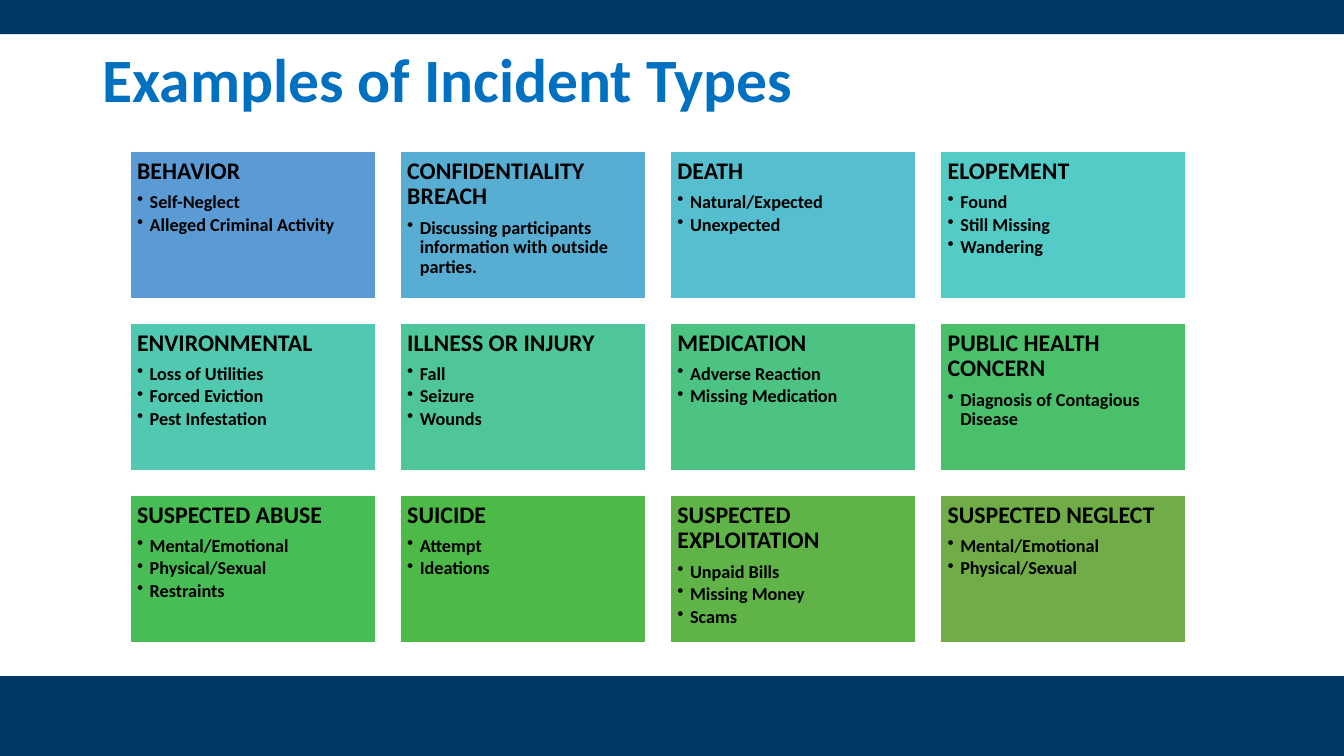
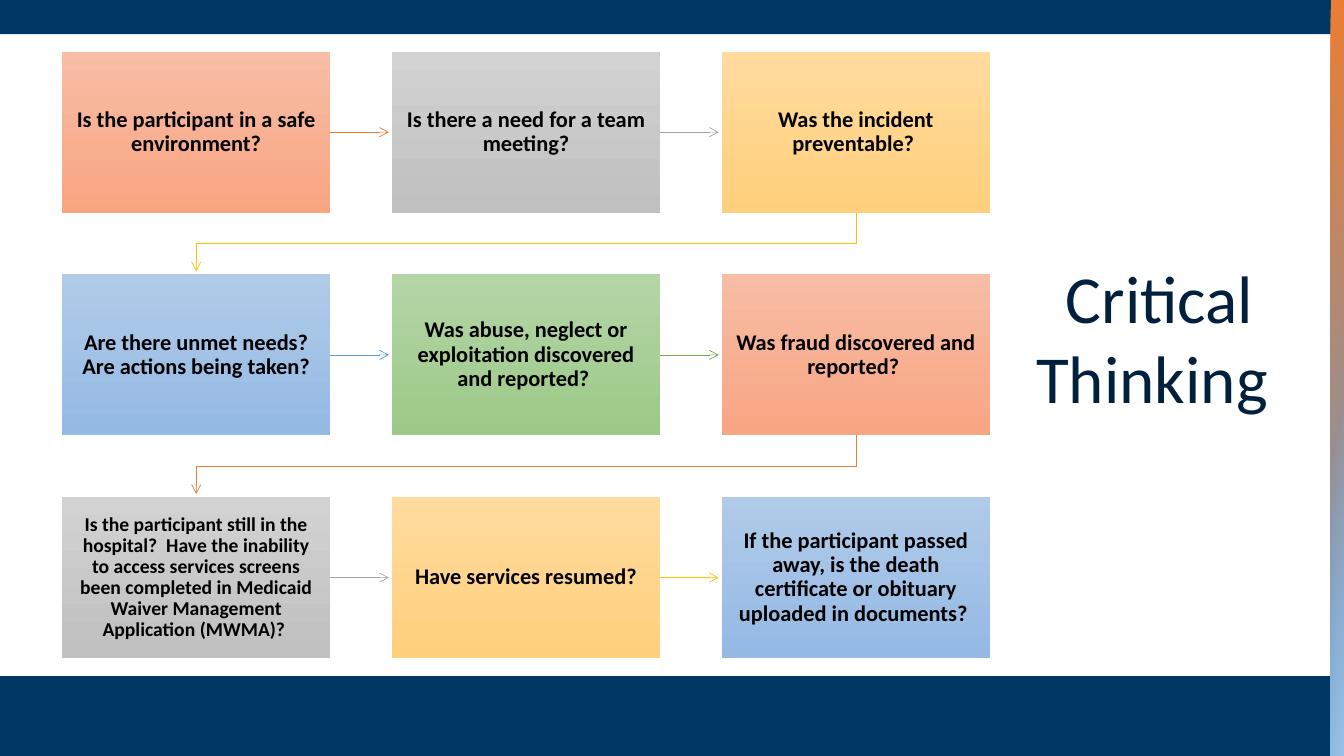
"""Build two slides on incident types and critical thinking."""
from lxml.etree import SubElement
from pptx import Presentation
from pptx.dml.color import RGBColor
from pptx.enum.shapes import MSO_CONNECTOR, MSO_SHAPE
from pptx.enum.text import MSO_ANCHOR, PP_ALIGN
from pptx.oxml.ns import qn
from pptx.util import Pt

WIDE, HIGH = 960, 540
FONT = "Calibri"
NAVY = RGBColor(0x00, 0x38, 0x65)
INK = RGBColor(0x01, 0x20, 0x3D)
AZURE = RGBColor(0x00, 0x70, 0xC0)
BLACK = RGBColor(0x00, 0x00, 0x00)
WHITE = RGBColor(0xFF, 0xFF, 0xFF)
ORANGE = RGBColor(0xED, 0x7D, 0x31)
GRAY = RGBColor(0xA5, 0xA5, 0xA5)
GOLD = RGBColor(0xFF, 0xC0, 0x00)
BLUE = RGBColor(0x5B, 0x9B, 0xD5)
GREEN = RGBColor(0x70, 0xAD, 0x47)
SKY = RGBColor(0x9D, 0xC3, 0xE6)

BANDS = [(0, 483, WIDE, 57), (0, 0, WIDE, 24.4)]

CARDS = [
    ("BEHAVIOR", BLUE, ["Self-Neglect", "Alleged Criminal Activity"]),
    ("CONFIDENTIALITY BREACH", RGBColor(0x58, 0xAD, 0xD2),
     ["Discussing participants information with outside parties."]),
    ("DEATH", RGBColor(0x56, 0xBF, 0xCF), ["Natural/Expected", "Unexpected"]),
    ("ELOPEMENT", RGBColor(0x53, 0xCC, 0xC8),
     ["Found", "Still Missing", "Wandering"]),
    ("ENVIRONMENTAL", RGBColor(0x51, 0xC9, 0xB0),
     ["Loss of Utilities", "Forced Eviction", "Pest Infestation"]),
    ("ILLNESS OR INJURY", RGBColor(0x4F, 0xC6, 0x99),
     ["Fall", "Seizure", "Wounds"]),
    ("MEDICATION", RGBColor(0x4C, 0xC3, 0x82),
     ["Adverse Reaction", "Missing Medication"]),
    ("PUBLIC HEALTH CONCERN", RGBColor(0x4A, 0xC0, 0x6B),
     ["Diagnosis of Contagious Disease"]),
    ("SUSPECTED ABUSE", RGBColor(0x48, 0xBC, 0x55),
     ["Mental/Emotional", "Physical/Sexual", "Restraints"]),
    ("SUICIDE", RGBColor(0x4D, 0xB9, 0x46), ["Attempt", "Ideations"]),
    ("SUSPECTED EXPLOITATION", RGBColor(0x60, 0xB3, 0x47),
     ["Unpaid Bills", "Missing Money", "Scams"]),
    ("SUSPECTED NEGLECT", GREEN, ["Mental/Emotional", "Physical/Sexual"]),
]

STEPS = [
    ("Is the participant in a safe environment?", 16),
    ("Is there a need for a team meeting?", 16),
    ("Was the incident preventable? ", 16),
    ("Are there unmet needs? Are actions being taken?", 16),
    ("Was abuse, neglect or exploitation discovered and reported? ", 16),
    ("Was fraud discovered and reported? ", 16),
    ("Is the participant still in the hospital?  Have the inability to access "
     "services screens been completed in Medicaid Waiver Management "
     "Application (MWMA)? ", 14),
    ("Have services resumed?", 16),
    ("If the participant passed away, is the death certificate or obituary "
     "uploaded in documents? ", 16),
]

TONES = [
    (ORANGE, RGBColor(0xF7, 0xBD, 0xA5), RGBColor(0xF8, 0xA5, 0x82)),
    (GRAY, RGBColor(0xD2, 0xD2, 0xD2), RGBColor(0xC0, 0xC0, 0xC0)),
    (GOLD, RGBColor(0xFF, 0xDB, 0x9E), RGBColor(0xFF, 0xD0, 0x7C)),
    (BLUE, RGBColor(0xB1, 0xCB, 0xE9), RGBColor(0x93, 0xB9, 0xE4)),
    (GREEN, RGBColor(0xB5, 0xD5, 0xA7), RGBColor(0x9C, 0xC9, 0x87)),
]


def points(*nums):
    return [Pt(num) for num in nums]


def write(frame, text, size, color=BLACK, bold=True, align=PP_ALIGN.LEFT,
          lead=0.9, after=0, bullet=False):
    para = frame.paragraphs[0]
    if para.runs:
        para = frame.add_paragraph()
    if bullet:
        props = para._p.get_or_add_pPr()
        props.set("marL", str(Pt(9)))
        props.set("indent", str(Pt(-9)))
        SubElement(props, qn("a:buChar")).set("char", "•")
    para.alignment = align
    para.line_spacing = lead
    para.space_after = Pt(after)
    run = para.add_run()
    run.text = text
    run.font.name, run.font.size = FONT, Pt(size)
    run.font.bold, run.font.color.rgb = bold, color


def set_frame(shape, anchor, side=7.2, edge=3.6):
    frame = shape.text_frame
    frame.word_wrap = True
    frame.vertical_anchor = anchor
    frame.margin_left = frame.margin_right = Pt(side)
    frame.margin_top = frame.margin_bottom = Pt(edge)
    return frame


def add_label(slide, box, anchor, text, size, **form):
    shape = slide.shapes.add_textbox(*points(*box))
    write(set_frame(shape, anchor), text, size, **form)


def add_rect(slide, box, fill=None, line=None):
    shape = slide.shapes.add_shape(MSO_SHAPE.RECTANGLE, *points(*box))
    shape.shadow.inherit = False
    if fill is not None:
        shape.fill.solid()
        shape.fill.fore_color.rgb = fill
    if line is None:
        shape.line.fill.background()
    else:
        shape.line.color.rgb = line
        shape.line.width = Pt(1)
    return shape


def add_blend(slide, box, first, last, angle=270, start=0):
    shape = add_rect(slide, box)
    shape.fill.gradient()
    shape.fill.gradient_angle = angle
    for stop, color, spot in zip(shape.fill.gradient_stops,
                                 (first, last), (start, 1)):
        stop.color.rgb = color
        stop.position = spot
    return shape


def add_arrow(slide, spots, color):
    if len(spots) == 2:
        arrow = slide.shapes.add_connector(
            MSO_CONNECTOR.STRAIGHT, *points(*spots[0], *spots[1]))
        SubElement(arrow._element.spPr, qn("a:effectLst"))
    else:
        head, *rest = [points(*spot) for spot in spots]
        path = slide.shapes.build_freeform(*head)
        path.add_line_segments(rest, close=False)
        arrow = path.convert_to_shape()
        arrow.shadow.inherit = False
        arrow.fill.background()
    arrow.line.color.rgb = color
    arrow.line.width = Pt(0.5)
    SubElement(arrow.line._get_or_add_ln(), qn("a:tailEnd")).set("type", "arrow")


def add_slide(deck):
    slide = deck.slides.add_slide(deck.slide_layouts[6])
    for band in BANDS:
        add_rect(slide, band, NAVY)
    return slide


def build_types(deck):
    slide = add_slide(deck)
    add_label(slide, (66, 28.8, 828, 60.5), MSO_ANCHOR.MIDDLE,
              "Examples of Incident Types", 44, color=AZURE)
    for num, (head, fill, items) in enumerate(CARDS):
        row, col = divmod(num, 4)
        box = (92.8 + col * 193, 108.2 + row * 122.8, 175.5, 105.2)
        card = add_rect(slide, box, fill, WHITE)
        frame = set_frame(card, MSO_ANCHOR.TOP, 5.1, 5.1)
        write(frame, head, 17, after=6)
        for item in items:
            write(frame, item, 13, after=2, bullet=True)


def build_steps(deck):
    slide = add_slide(deck)
    wide, high, across, down, gap = 191.5, 115, 235.6, 159.1, 2.2
    for num, (text, size) in enumerate(STEPS):
        row, col = divmod(num, 3)
        left, top = 44.4 + col * across, 36.9 + row * down
        line, first, last = TONES[num % len(TONES)]
        box = add_blend(slide, (left, top, wide, high), first, last)
        write(set_frame(box, MSO_ANCHOR.MIDDLE, 9.4, 9.9), text, size,
              align=PP_ALIGN.CENTER)
        mid, base = left + wide / 2, top + high
        if col < 2:
            level = top + high / 2
            add_arrow(slide, [(left + wide, level),
                              (left + across - gap, level)], line)
        elif row < 2:
            back, turn = mid - 2 * across, (base + top + down) / 2
            add_arrow(slide, [(mid, base), (mid, turn), (back, turn),
                              (back, top + down - gap)], line)
    add_blend(slide, (950.4, 0, 9.6, HIGH), ORANGE, BLUE, 330)
    glow = add_blend(slide, (950.4, 278, 9.6, 262), SKY, SKY, 350, 0.19)
    clear = next(glow._element.spPr.iter(qn("a:srgbClr")))
    SubElement(clear, qn("a:alpha")).set("val", "0")
    add_label(slide, (723.6, 179.3, 209.5, 123.8), MSO_ANCHOR.TOP,
              "Critical Thinking ", 48, color=INK, bold=False,
              align=PP_ALIGN.CENTER, lead=1.0)


def main():
    deck = Presentation()
    deck.slide_width, deck.slide_height = points(WIDE, HIGH)
    build_types(deck)
    build_steps(deck)
    deck.save("out.pptx")


if __name__ == "__main__":
    main()
